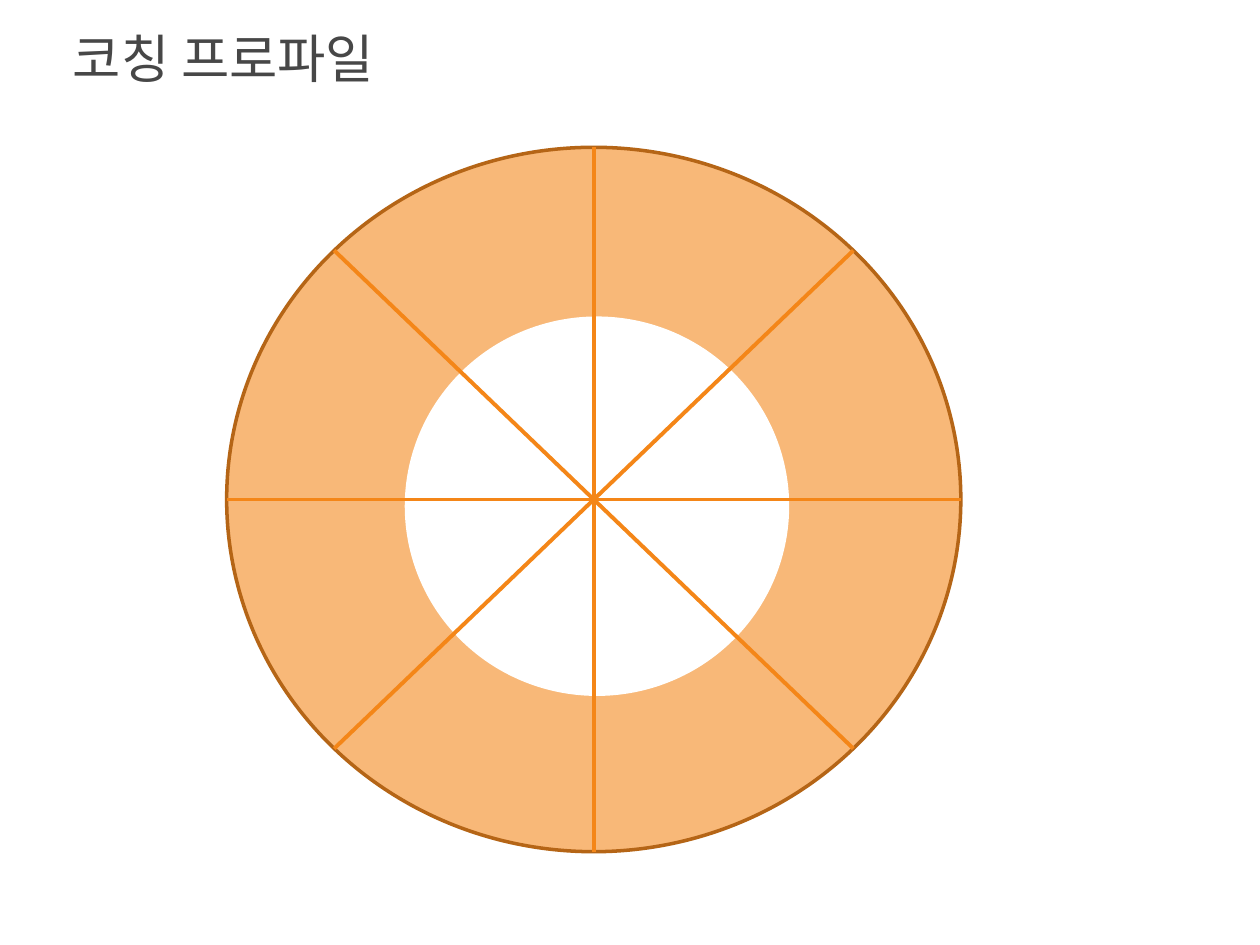
import math

import lxml.etree
import pptx
import pptx.dml.color
import pptx.enum.shapes
import pptx.enum.text
import pptx.oxml.ns
import pptx.util

Cm = pptx.util.Cm
Pt = pptx.util.Pt
qn = pptx.oxml.ns.qn
hues = {"text": "474747", "ring": "F8B878", "rim": "B56516",
        "hub": "FFFFFF", "spoke": "F48618"}


def tint(name):
    return pptx.dml.color.RGBColor.from_string(hues[name])


def write(text, *, box, size, color, face):
    frame = slide.shapes.add_textbox(*map(Cm, box)).text_frame
    frame.word_wrap = True
    frame.vertical_anchor = pptx.enum.text.MSO_ANCHOR.MIDDLE
    run = frame.paragraphs[0].add_run()
    run.text = text
    run.font.size = Pt(size)
    run.font.name = face
    run.font.color.rgb = tint(color)
    # Korean glyphs take the East Asian typeface
    asian = lxml.etree.SubElement(run.font._element, qn("a:ea"))
    asian.set("typeface", face)


deck = pptx.Presentation()
deck.slide_width, deck.slide_height = Cm(25.4), Cm(19.05)
slide = deck.slides.add_slide(deck.slide_layouts[6])

# Title
write("코칭 프로파일", box=(1.22, 0.2, 23.34, 1.91), size=30,
      color="text", face="Noto Sans CJK KR")

# Ring and hub: left, top, width, height, fill, outline
mid_x, mid_y = 11.97, 10.07
rad_x, rad_y = 7.4, 7.1
discs = [
    (mid_x - rad_x, mid_y - rad_y, 2 * rad_x, 2 * rad_y, "ring", "rim"),
    (8.16, 6.38, 7.75, 7.65, "hub", None),
]
for *box, fill, edge in discs:
    disc = slide.shapes.add_shape(
        pptx.enum.shapes.MSO_SHAPE.OVAL, *map(Cm, box))
    disc.shadow.inherit = False
    disc.fill.solid()
    disc.fill.fore_color.rgb = tint(fill)
    if edge:
        disc.line.color.rgb = tint(edge)
        disc.line.width = Pt(2)
    else:
        disc.line.fill.background()

# Spokes: four diameters, 45 degrees apart
for turn in (90, 0, 45, 135):
    angle = math.radians(turn)
    dx, dy = rad_x * math.cos(angle), rad_y * math.sin(angle)
    spoke = slide.shapes.add_connector(
        pptx.enum.shapes.MSO_CONNECTOR.STRAIGHT,
        Cm(mid_x + dx), Cm(mid_y - dy), Cm(mid_x - dx), Cm(mid_y + dy))
    spoke.line.color.rgb = tint("spoke")
    spoke.line.width = Pt(2.25)
    lxml.etree.SubElement(spoke._element.spPr, qn("a:effectLst"))

deck.save("out.pptx")
